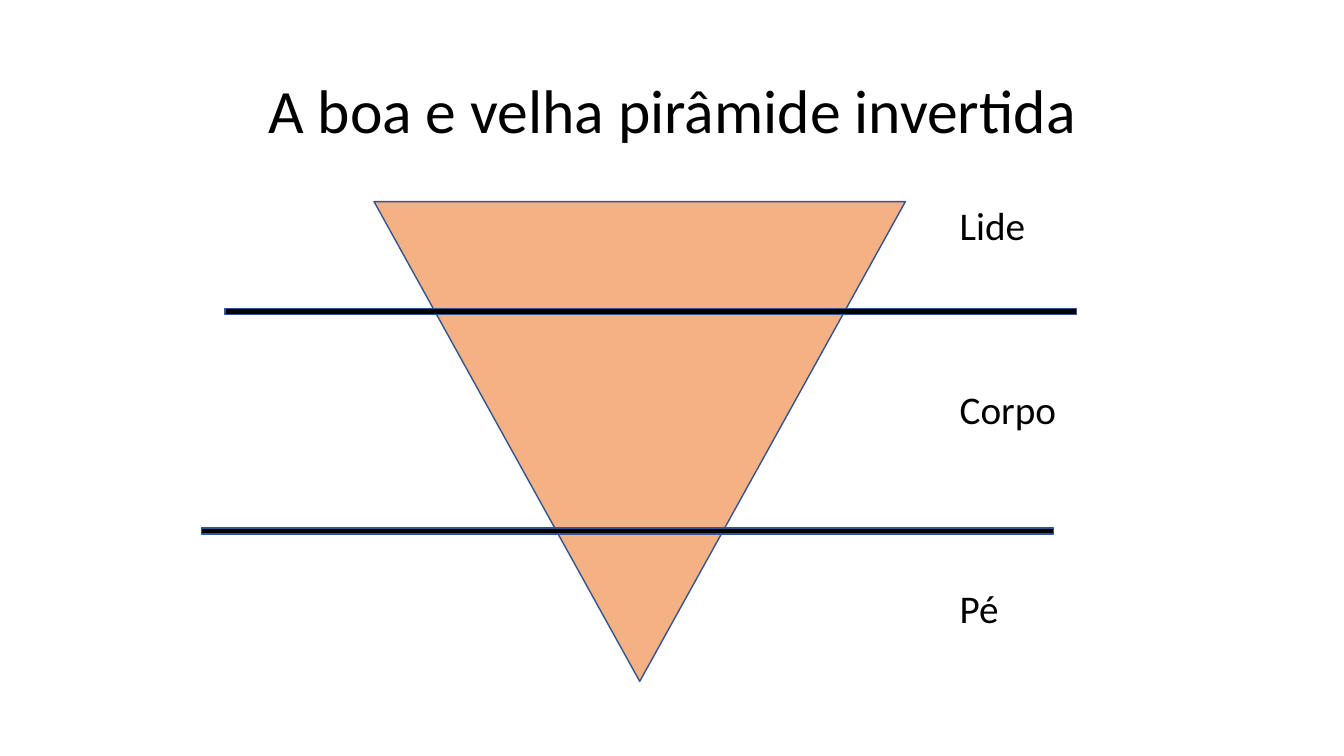
from pptx import Presentation
from pptx import util as u
from pptx.dml.color import RGBColor
from pptx.enum import shapes, text

PX = 9144
BLACK = RGBColor(0x00, 0x00, 0x00)
PEACH = RGBColor(0xF4, 0xB1, 0x83)
BLUE = RGBColor(0x32, 0x54, 0x91)


def scale(*sizes):
    """Turn px lengths into EMU."""
    return [u.Emu(size * PX) for size in sizes]


def style(part, words, size, space=1.0):
    """Write one paragraph of black text and return it."""
    frame = part.text_frame
    frame.text = words
    frame.word_wrap = True
    line = frame.paragraphs[0]
    line.line_spacing = space
    font = line.runs[0].font
    font.name, font.size = "Calibri", u.Pt(size)
    font.color.rgb = BLACK
    return line


def add_title(slide, box, words):
    """Place the centred title in its box."""
    title = slide.shapes.title
    title.left, title.top, title.width, title.height = scale(*box)
    style(title, words, 44, 0.9).alignment = text.PP_ALIGN.CENTER
    title.text_frame.vertical_anchor = text.MSO_ANCHOR.MIDDLE


def add_solid(slide, kind, box, fill):
    """Draw a filled shape with a thin blue outline."""
    solid = slide.shapes.add_shape(kind, *scale(*box))
    solid.shadow.inherit = False
    solid.fill.solid()
    solid.fill.fore_color.rgb = fill
    solid.line.color.rgb = BLUE
    solid.line.width = u.Pt(1)
    return solid


def add_label(slide, box, words, space):
    """Add the name of one pyramid level."""
    label = slide.shapes.add_textbox(*scale(*box))
    style(label, words, 28, space)


def add_pyramid(slide, box):
    """Draw the inverted pyramid, its two dividers and its labels."""
    left, top, width, height = box
    kinds = shapes.MSO_SHAPE
    cone = add_solid(slide, kinds.ISOSCELES_TRIANGLE, box, PEACH)
    cone.rotation = 180
    for shift, drop in ((-148, 106), (-171, 324)):
        bar = (left + shift, top + drop, 845, 6)
        add_solid(slide, kinds.RECTANGLE, bar, BLACK)
    for words, drop, space in (("Lide", 0, 0.9), ("Corpo", 177, 1.0), ("Pé", 375, 1.0)):
        add_label(slide, (left + width + 44, top + drop, 139, 57), words, space)


def main():
    """Build and save the slide."""
    deck = Presentation()
    deck.slide_width, deck.slide_height = u.Inches(13.33), u.Inches(7.5)
    slide = deck.slides.add_slide(deck.slide_layouts[5])
    add_title(slide, (92, 40, 1150, 145), "A boa e velha pirâmide invertida")
    add_pyramid(slide, (371, 200, 527, 476))
    deck.save("out.pptx")


if __name__ == "__main__":
    main()
